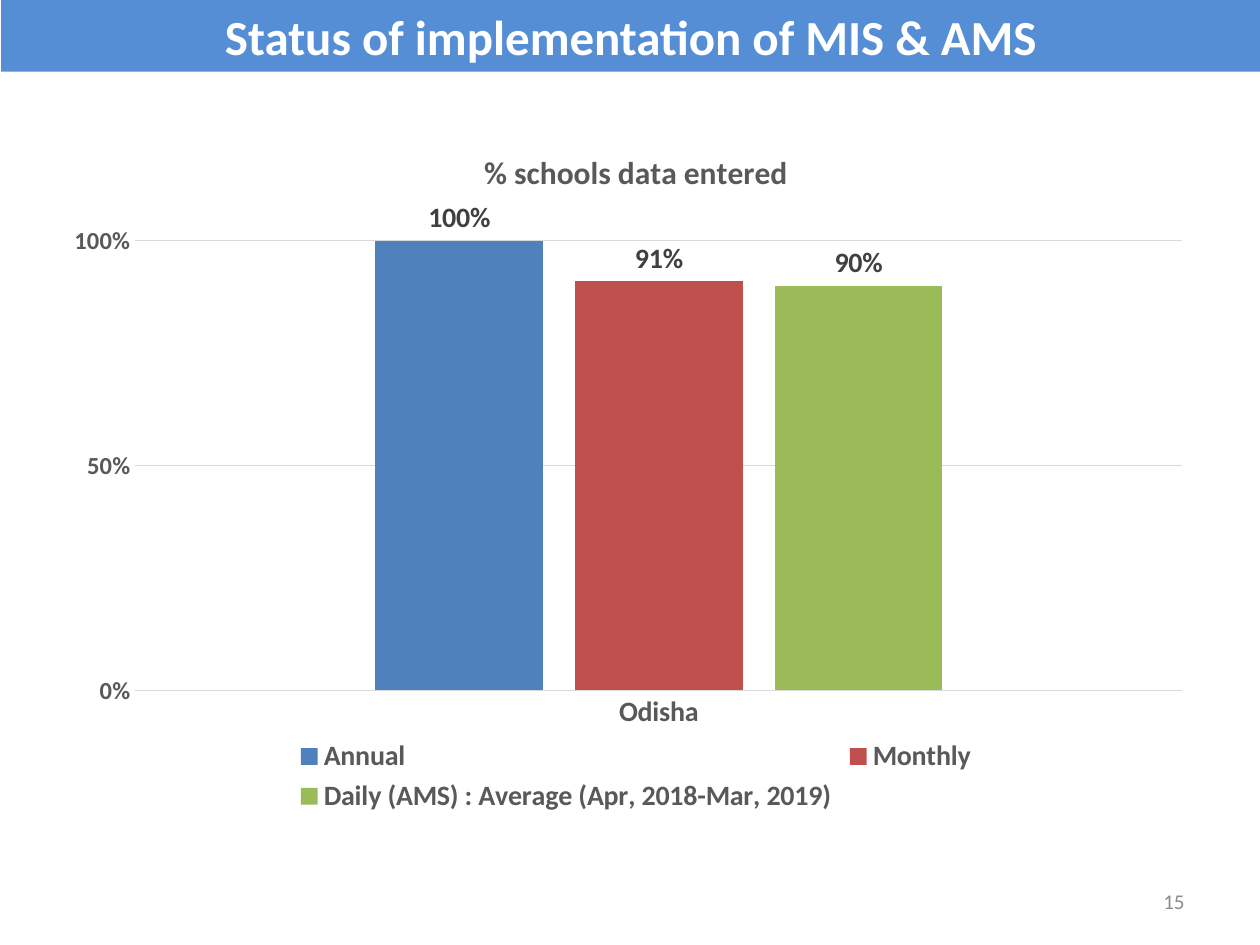
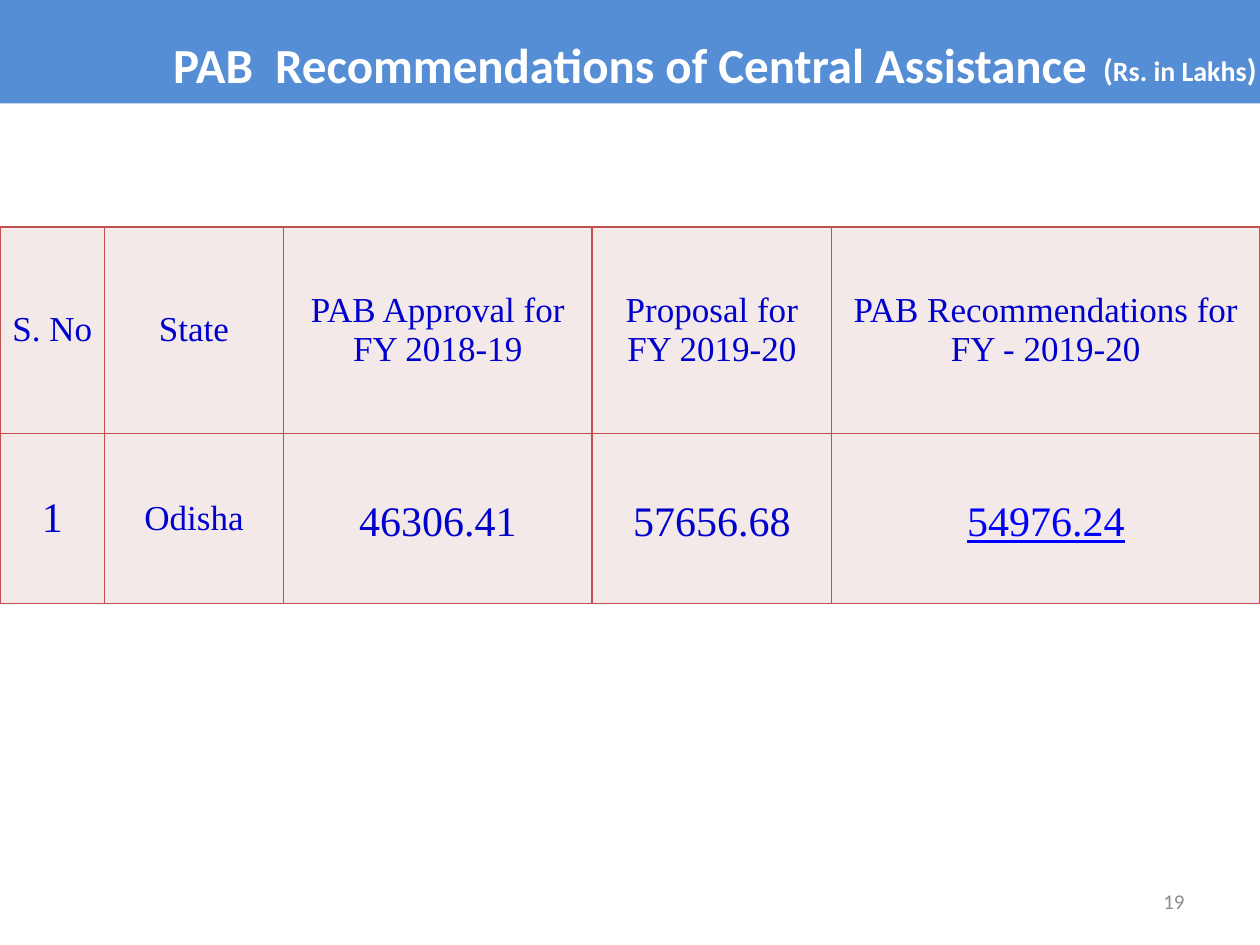
"""Builds two slides on school data entry and recommended central assistance."""
import pptx
import pptx.util
import pptx.chart.data
import pptx.dml.color
import pptx.enum.chart
import pptx.enum.shapes
import pptx.enum.text
import pptx.oxml

WIDTH, HEIGHT = 10, 7.5
BAND, WHITE, NUMBER_GREY = "558ED5", "FFFFFF", "8C8C8C"
CHART_GREY, LABEL_GREY, GRID_GREY = "595959", "404040", "D9D9D9"
CELL_FILL, CELL_BORDER, CELL_BLUE, LINK_BLUE = "F4E9E9", "C0504D", "0000CC", "0000FF"
Inches, Pt = pptx.util.Inches, pptx.util.Pt
ALIGN, MIDDLE = pptx.enum.text.PP_ALIGN, pptx.enum.text.MSO_ANCHOR.MIDDLE


def paint(part, colour):
    """Gives a fill or a line one solid colour."""
    fill = part.fill if hasattr(part, "fill") else part
    fill.solid()
    fill.fore_color.rgb = pptx.dml.color.RGBColor.from_string(colour)


def style(font, size, colour, bold=True, face="Calibri"):
    """Sets size, colour, weight and typeface of a font."""
    font.size, font.bold, font.name = Pt(size), bold, face
    paint(font, colour)


deck = pptx.Presentation()
deck.slide_width, deck.slide_height = Inches(WIDTH), Inches(HEIGHT)
pages = []
for heading, band_left, band_height, spacing, number in (
    ("Status of implementation of MIS & AMS", 0.01, 0.57, 1, "15"),
    ("PAB  Recommendations of Central Assistance", 0, 0.82, 1.4, "19"),
):
    page = deck.slides.add_slide(deck.slide_layouts[6])
    pages.append(page)
    band = page.shapes.add_shape(
        pptx.enum.shapes.MSO_SHAPE.RECTANGLE,
        Inches(band_left), 0, Inches(WIDTH - band_left), Inches(band_height))
    band.shadow.inherit = False
    paint(band, BAND)
    band.line.fill.background()
    footer = page.shapes.add_textbox(Inches(7.17), Inches(6.95), Inches(2.33), Inches(0.4))
    for holder, words, size, colour, bold, align, leading in (
        (band, heading, 28, WHITE, True, ALIGN.CENTER, spacing),
        (footer, number, 12, NUMBER_GREY, False, ALIGN.RIGHT, 1),
    ):
        holder.text_frame.word_wrap = True
        holder.text_frame.vertical_anchor = MIDDLE
        paragraph = holder.text_frame.paragraphs[0]
        paragraph.alignment, paragraph.line_spacing = align, leading
        run = paragraph.add_run()
        run.text = words
        style(run.font, size, colour, bold)
status_page, assistance_page = pages

entry_rates = (
    ("Annual", 1, "4F81BD"),
    ("Monthly", 0.91, "C0504D"),
    ("Daily (AMS) : Average (Apr, 2018-Mar, 2019)", 0.9, "9BBB59"),
)
entry_data = pptx.chart.data.CategoryChartData(number_format="0%")
entry_data.categories = ["Odisha"]
for name, rate, colour in entry_rates:
    entry_data.add_series(name, [rate])
chart = status_page.shapes.add_chart(
    pptx.enum.chart.XL_CHART_TYPE.COLUMN_CLUSTERED,
    Inches(0.59), Inches(0.99), Inches(8.91), Inches(5.51), entry_data).chart
style(chart.font, 10, "000000", False)
chart.has_title = True
chart_title = chart.chart_title.text_frame.paragraphs[0].add_run()
chart_title.text = "% schools data entered"
style(chart_title.font, 18, CHART_GREY)
chart.has_legend = True
chart.legend.position = pptx.enum.chart.XL_LEGEND_POSITION.BOTTOM
chart.legend.include_in_layout = False
style(chart.legend.font, 16, CHART_GREY)

columns = chart.plots[0]
columns.gap_width, columns.overlap, columns.vary_by_categories = 286, -19, False
for series, (name, rate, colour) in zip(columns.series, entry_rates):
    paint(series.format, colour)
    labels = series.data_labels
    labels.show_value = True
    labels.number_format, labels.number_format_is_linked = "0%", False
    labels.position = pptx.enum.chart.XL_LABEL_POSITION.OUTSIDE_END
    style(labels.font, 16, LABEL_GREY)

states, percent = chart.category_axis, chart.value_axis
for axis, size in ((states, 16), (percent, 14)):
    axis.major_tick_mark = axis.minor_tick_mark = pptx.enum.chart.XL_TICK_MARK.NONE
    style(axis.tick_labels.font, size, CHART_GREY)
percent.minimum_scale, percent.maximum_scale, percent.major_unit = 0, 1, 0.5
percent.has_major_gridlines = True
percent.tick_labels.number_format = "0%"
percent.tick_labels.number_format_is_linked = False
percent.format.line.fill.background()
for line in (states.format.line, percent.major_gridlines.format.line):
    paint(line, GRID_GREY)
    line.width = Pt(0.75)

plot_area = chart.element.chart.plotArea
for old_layout in plot_area.findall(pptx.oxml.ns.qn("c:layout")):
    plot_area.remove(old_layout)
places = "".join(f'<c:{tag} val="{value}"/>' for tag, value in (
    ("layoutTarget", "inner"), ("xMode", "edge"), ("yMode", "edge"),
    ("x", 0.054), ("y", 0.167), ("w", 0.933), ("h", 0.648)))
plot_area.insert(0, pptx.oxml.parse_xml(
    f'<c:layout {pptx.oxml.ns.nsdecls("c")}><c:manualLayout>{places}</c:manualLayout></c:layout>'))

unit = assistance_page.shapes.add_textbox(
    Inches(8.65), Inches(0.35), Inches(1.43), Inches(0.4)).text_frame
unit.word_wrap = False
unit.paragraphs[0].alignment = ALIGN.CENTER
for words, size in (("(", 18), ("Rs. in Lakhs", 16), (")", 18)):
    run = unit.paragraphs[0].add_run()
    run.text = words
    style(run.font, size, WHITE)

assistance_rows = (
    (("S. No",), ("State",), ("PAB Approval for", "FY 2018-19"),
     ("Proposal for", "FY 2019-20"), ("PAB Recommendations for", "FY - 2019-20")),
    (("1",), ("Odisha",), ("46306.41",), ("57656.68",), ("54976.24",)),
)
column_widths, row_heights = (0.83, 1.42, 2.45, 1.9, 3.4), (1.64, 1.35)
assistance = assistance_page.shapes.add_table(
    len(row_heights), len(column_widths), 0, Inches(1.8),
    Inches(WIDTH), Inches(sum(row_heights))).table
for column, width in zip(assistance.columns, column_widths):
    column.width = Inches(width)
for r, entries in enumerate(assistance_rows):
    assistance.rows[r].height = Inches(row_heights[r])
    for c, lines in enumerate(entries):
        cell = assistance.cell(r, c)
        amount, recommended = r == 1 and c >= 2, r == 1 and c == 4
        cell.vertical_anchor = MIDDLE
        cell.margin_left = cell.margin_right = Inches(0.01 if r == 1 and c in (1, 2, 3) else 0.07)
        cell.margin_top = Inches(0.01 if r == 1 and c else 0)
        cell.margin_bottom = 0
        for i, words in enumerate(lines):
            frame = cell.text_frame
            paragraph = frame.add_paragraph() if i else frame.paragraphs[0]
            paragraph.alignment = ALIGN.CENTER
            if amount:
                paragraph.line_spacing, paragraph.space_after = 1.15, Pt(10)
            run = paragraph.add_run()
            run.text = words
            style(run.font, 24 if r == 1 and c != 1 else 20,
                  LINK_BLUE if recommended else CELL_BLUE, False, "Times New Roman")
            if recommended:
                run.font.underline = True
        properties = cell._tc.get_or_add_tcPr()
        for side in ("lnL", "lnR", "lnT", "lnB"):
            properties.append(pptx.oxml.parse_xml(
                f'<a:{side} {pptx.oxml.ns.nsdecls("a")} w="{Pt(1)}"><a:solidFill>'
                f'<a:srgbClr val="{CELL_BORDER}"/></a:solidFill></a:{side}>'))
        paint(cell, CELL_FILL)

deck.save("out.pptx")
